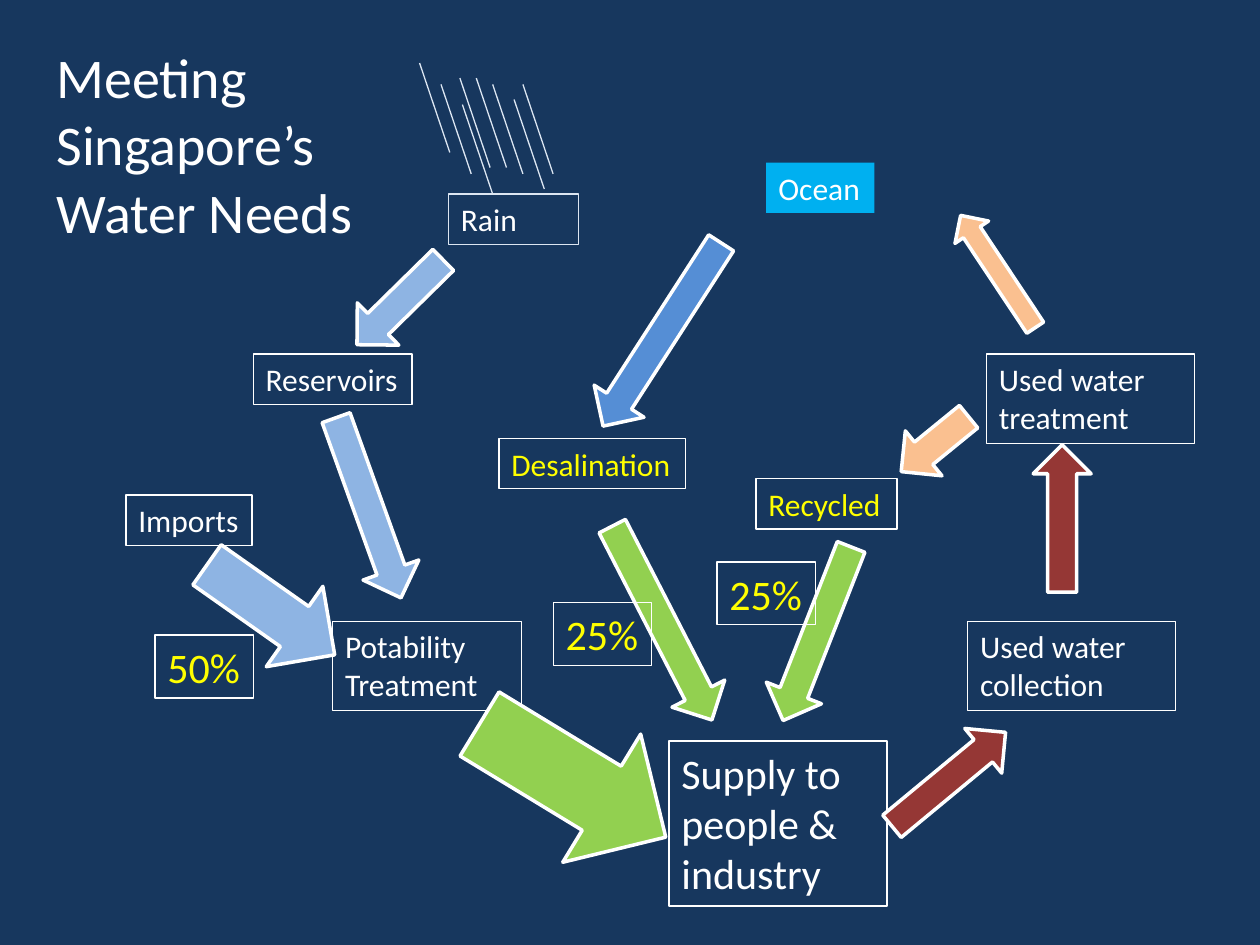
from pptx import Presentation
from pptx.dml.color import RGBColor
from pptx.enum.shapes import MSO_CONNECTOR, MSO_SHAPE
from pptx.enum.text import MSO_ANCHOR, PP_ALIGN
from pptx.oxml.ns import qn
from pptx.util import Inches, Pt
from lxml.etree import SubElement

WHITE, YELLOW, PALE = "FFFFFF", "FFFF00", "DCE6F2"
LIGHT_BLUE, BLUE, GREEN = "8EB4E3", "558ED5", "92D050"
PEACH, RED = "FAC090", "953735"


def color(value):
    return RGBColor.from_string(value)


def write_text(shape, text, size, ink, wrap):
    frame = shape.text_frame
    frame.text = text
    frame.word_wrap = wrap
    frame.vertical_anchor = MSO_ANCHOR.TOP
    paragraph = frame.paragraphs[0]
    paragraph.alignment = PP_ALIGN.LEFT
    font = paragraph.runs[0].font
    font.name = "Calibri"
    font.size = Pt(size)
    font.color.rgb = color(ink)


deck = Presentation()
deck.slide_width, deck.slide_height = Inches(10), Inches(7.5)
page = deck.slides.add_slide(deck.slide_layouts[6])
page.background.fill.solid()
page.background.fill.fore_color.rgb = color("17375E")

# Rain: parallel slanted strokes, each given by its top end
for left, top in [(3.33, 0.5), (3.5, 0.67), (3.67, 0.83), (3.65, 0.62),
                  (3.78, 0.62), (3.91, 0.67), (4.08, 0.79), (4.15, 0.67)]:
    drop = page.shapes.add_connector(
        MSO_CONNECTOR.STRAIGHT, Inches(left), Inches(top),
        Inches(left + 0.24), Inches(top + 0.71))
    drop.line.color.rgb = color(PALE)
    drop.line.width = Pt(0.75)
    SubElement(drop._element.spPr, qn("a:effectLst"))

# Flow arrows: left, top, width, height, rotation, fill
arrows = [
    (5.02, 1.79, 0.47, 1.73, 32.8, BLUE),         # ocean to desalination
    (5.02, 4.08, 0.47, 1.73, 332.8, GREEN),       # desalination to supply
    (1.76, 4.22, 0.78, 1.24, 305.2, LIGHT_BLUE),  # imports to potability
    (2.69, 3.27, 0.47, 1.52, 340.2, LIGHT_BLUE),  # reservoirs to potability
    (2.94, 1.92, 0.47, 0.96, 45.5, LIGHT_BLUE),   # rain to reservoirs
    (3.95, 5.33, 1.19, 1.73, 301.3, GREEN),       # potability to supply
    (6.25, 4.29, 0.47, 1.48, 21.4, GREEN),        # recycled to supply
    (7.19, 3.18, 0.46, 0.69, 50.8, PEACH),        # treatment to recycled
    (7.3, 5.6, 0.46, 1.17, 230.4, RED),           # supply to collection
    (8.2, 3.53, 0.46, 1.17, 180, RED),            # collection to treatment
    (7.76, 1.62, 0.32, 1.07, 146.4, PEACH),       # treatment to ocean
]

# Stage boxes: text, left, top, width, height, size, ink, wrap, outline, fill
stages = [
    ("Rain", 3.56, 1.54, 1.03, 0.4, 18, WHITE, True, PALE, None),
    ("Ocean", 6.08, 1.29, 0.86, 0.4, 18, WHITE, False, None, "00B0F0"),
    ("Desalination", 3.96, 3.48, 1.48, 0.4, 18, YELLOW, False, WHITE, None),
    ("Imports", 1, 3.93, 1, 0.4, 18, WHITE, False, WHITE, None),
    ("Reservoirs", 2.01, 2.81, 1.26, 0.4, 18, WHITE, False, WHITE, None),
    ("Potability Treatment", 2.64, 4.93, 1.5, 0.71, 18, WHITE, True, WHITE, None),
    ("Supply to people & industry", 5.31, 5.88, 1.73, 1.31, 24, WHITE, True, WHITE, None),
    ("Recycled", 6, 3.8, 1.12, 0.4, 18, YELLOW, False, WHITE, None),
    ("Used water collection", 7.68, 4.93, 1.65, 0.71, 18, WHITE, True, WHITE, None),
    ("Used water treatment", 7.83, 2.81, 1.65, 0.71, 18, WHITE, True, WHITE, None),
]

# Shares of supply, drawn above the arrows
shares = [(text, left, top, 0.78, 0.5, 24, YELLOW, False, WHITE, None)
          for text, left, top in [("50%", 1.23, 5.04), ("25%", 4.39, 4.78),
                                  ("25%", 5.69, 4.46)]]

# Boxes below the arrows, then the arrows, then the shares
for layer in (stages, arrows, shares):
    for item in layer:
        if layer is arrows:
            left, top, width, height, rotation, fill = item
            kind, outline, weight = MSO_SHAPE.DOWN_ARROW, WHITE, 2
        else:
            text, left, top, width, height, size, ink, wrap, outline, fill = item
            kind, rotation, weight = MSO_SHAPE.RECTANGLE, 0, 0.75
        shape = page.shapes.add_shape(
            kind, Inches(left), Inches(top), Inches(width), Inches(height))
        shape.shadow.inherit = False
        shape.rotation = rotation
        if fill:
            shape.fill.solid()
            shape.fill.fore_color.rgb = color(fill)
        else:
            shape.fill.background()
        if outline:
            shape.line.color.rgb = color(outline)
            shape.line.width = Pt(weight)
        else:
            shape.line.fill.background()
        if layer is not arrows:
            write_text(shape, text, size, ink, wrap)

# Title
title = page.shapes.add_textbox(Inches(0.35), Inches(0.29), Inches(2.83), Inches(1.72))
write_text(title, "Meeting Singapore’s Water Needs", 32, WHITE, True)

deck.save("out.pptx")
